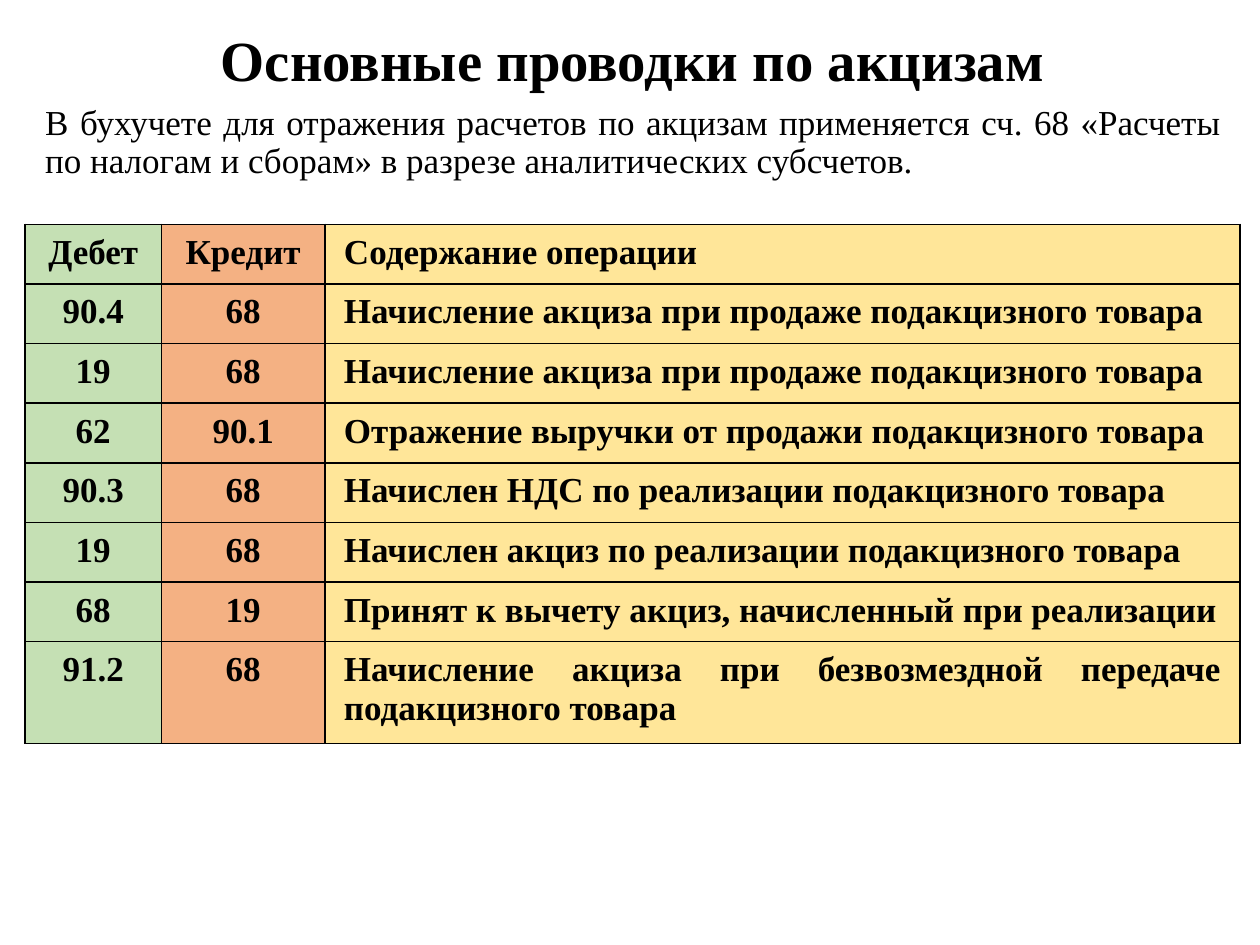
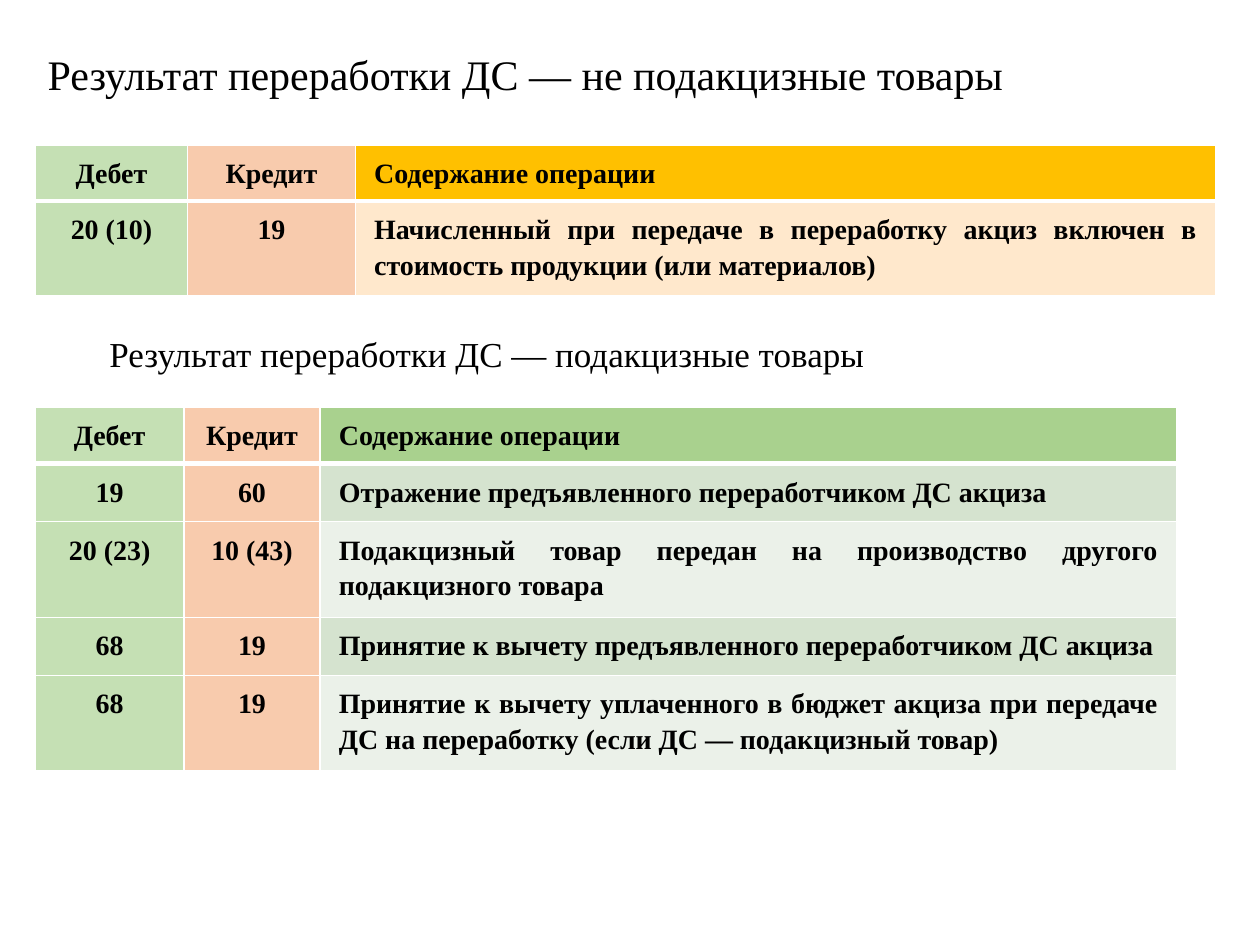
from lxml import etree
from pptx import Presentation
from pptx.dml.color import RGBColor
from pptx.enum.text import MSO_ANCHOR, PP_ALIGN
from pptx.oxml.ns import qn
from pptx.util import Inches, Pt

LEFT, CENTER, JUSTIFY = PP_ALIGN.LEFT, PP_ALIGN.CENTER, PP_ALIGN.JUSTIFY
TOP, MIDDLE = MSO_ANCHOR.TOP, MSO_ANCHOR.MIDDLE
FONT = "Times New Roman"
COLORS = {
    "black": "000000", "white": "FFFFFF", "debit": "C5E0B4",
    "credit": "F4B183", "credit_light": "F8CBAD", "yellow": "FFE699",
    "gold": "FFC000", "cream": "FFE8CC", "green": "A9D18E",
    "sage": "D5E3CF", "sage_light": "EBF1E9",
}

# Content
HEADER = ("Дебет", "Кредит", "Содержание операции")
MAIN_TITLE = "Основные проводки по акцизам"
MAIN_INTRO = ("В бухучете для отражения расчетов по акцизам применяется сч. 68 "
              "«Расчеты по налогам и сборам» в разрезе аналитических субсчетов.")
MAIN_ENTRIES = [
    HEADER,
    ("90.4", "68", "Начисление акциза при продаже подакцизного товара"),
    ("19", "68", "Начисление акциза при продаже подакцизного товара"),
    ("62", "90.1", "Отражение выручки от продажи подакцизного товара"),
    ("90.3", "68", "Начислен НДС по реализации подакцизного товара"),
    ("19", "68", "Начислен акциз по реализации подакцизного товара"),
    ("68", "19", "Принят к вычету акциз, начисленный при реализации"),
    ("91.2", "68", "Начисление акциза при безвозмездной передаче подакцизного товара"),
]
NON_EXCISE_TITLE = "Результат переработки ДС — не подакцизные товары"
NON_EXCISE_ENTRIES = [
    HEADER,
    ("20 (10)", "19", "Начисленный при передаче в переработку акциз включен "
                      "в стоимость продукции (или материалов)"),
]
EXCISE_TITLE = "Результат переработки ДС — подакцизные товары"
EXCISE_ENTRIES = [
    HEADER,
    ("19", "60", "Отражение предъявленного переработчиком ДС акциза"),
    ("20 (23)", "10 (43)", "Подакцизный товар передан на производство другого "
                           "подакцизного товара"),
    ("68", "19", "Принятие к вычету предъявленного переработчиком ДС акциза"),
    ("68", "19", "Принятие к вычету уплаченного в бюджет акциза при передаче "
                 "ДС на переработку (если ДС — подакцизный товар)"),
]


# Text
def write_text(frame, text, size=20, bold=False, align=LEFT, spacing=None, indent=0):
    paragraph = frame.paragraphs[0]
    paragraph.alignment = align
    if spacing:
        paragraph.line_spacing = spacing
    if indent:
        paragraph._p.get_or_add_pPr().set("indent", str(Inches(indent)))
    run = paragraph.add_run()
    run.text = text
    run.font.name = FONT
    run.font.size = Pt(size)
    run.font.bold = bold
    run.font.color.rgb = RGBColor.from_string(COLORS["black"])


def add_text(slide, text, box, anchor=TOP, inset_top=0.05, **text_format):
    frame = slide.shapes.add_textbox(*map(Inches, box)).text_frame
    frame.word_wrap = True
    frame.vertical_anchor = anchor
    frame.margin_top = Inches(inset_top)
    write_text(frame, text, **text_format)


# Tables
def set_borders(cell, color, widths):
    properties = cell._tc.get_or_add_tcPr()
    for side in "LRTB":
        line = etree.SubElement(properties, qn(f"a:ln{side}"),
                                w=str(Pt(widths.get(side, 1))))
        fill = etree.SubElement(line, qn("a:solidFill"))
        etree.SubElement(fill, qn("a:srgbClr"), val=COLORS[color])


def add_entries(slide, entries, left, top, columns, heights, credit, header_fill,
                body_fills, border, header_line=1, size=16, spacing=None):
    table = slide.shapes.add_table(
        len(entries), len(columns), Inches(left), Inches(top),
        Inches(sum(columns)), Inches(sum(heights))).table
    table.first_row = table.horz_banding = False
    for column, width in zip(table.columns, columns):
        column.width = Inches(width)
    for row_index, entry in enumerate(entries):
        table.rows[row_index].height = Inches(heights[row_index])
        operation_fill = (body_fills[(row_index - 1) % len(body_fills)]
                          if row_index else header_fill)
        # The line under the header belongs to both rows it separates
        widths = {0: {"B": header_line}, 1: {"T": header_line}}.get(row_index, {})
        fills = ("debit", credit, operation_fill)
        for column_index, (text, fill) in enumerate(zip(entry, fills)):
            cell = table.cell(row_index, column_index)
            cell.margin_left = cell.margin_right = Inches(0.15)
            cell.margin_top = cell.margin_bottom = Inches(0.07)
            set_borders(cell, border, widths)
            cell.fill.solid()
            cell.fill.fore_color.rgb = RGBColor.from_string(COLORS[fill])
            write_text(cell.text_frame, text, size=size, bold=True, spacing=spacing,
                       align=JUSTIFY if column_index == 2 else CENTER)


# Slides
def build_main_entries(slide):
    add_text(slide, MAIN_TITLE, (0.71, 0.21, 8.62, 0.59), anchor=MIDDLE,
             size=32.4, bold=True, align=CENTER, spacing=0.9)
    add_text(slide, MAIN_INTRO, (0.26, 0.79, 9.53, 0.74), align=JUSTIFY, spacing=0.9)
    add_entries(slide, MAIN_ENTRIES, 0.2, 1.78, (1.08, 1.3, 7.26),
                [0.45] * 7 + [0.76], "credit", "yellow", ["yellow"], "black", size=20)


def build_processing_results(slide):
    shared = dict(credit="credit_light", border="white", header_line=3, spacing=1.15)
    add_text(slide, NON_EXCISE_TITLE, (0.28, 0.4, 9.04, 0.75), inset_top=0.03,
             size=24, spacing=0.9)
    add_entries(slide, NON_EXCISE_ENTRIES, 0.28, 1.15, (1.21, 1.33, 6.83),
                [0.42, 0.72], header_fill="gold", body_fills=["cream"], **shared)
    add_text(slide, EXCISE_TITLE, (0.28, 2.54, 9.37, 0.46), align=JUSTIFY,
             spacing=1.15, indent=0.49)
    add_entries(slide, EXCISE_ENTRIES, 0.28, 3.23, (1.18, 1.08, 6.8),
                [0.45, 0.46, 0.76, 0.46, 0.76], header_fill="green",
                body_fills=["sage", "sage_light"], **shared)


def main():
    presentation = Presentation()
    presentation.slide_width = Inches(10)
    presentation.slide_height = Inches(7.5)
    for build in (build_main_entries, build_processing_results):
        build(presentation.slides.add_slide(presentation.slide_layouts[6]))
    presentation.save("out.pptx")


if __name__ == "__main__":
    main()
